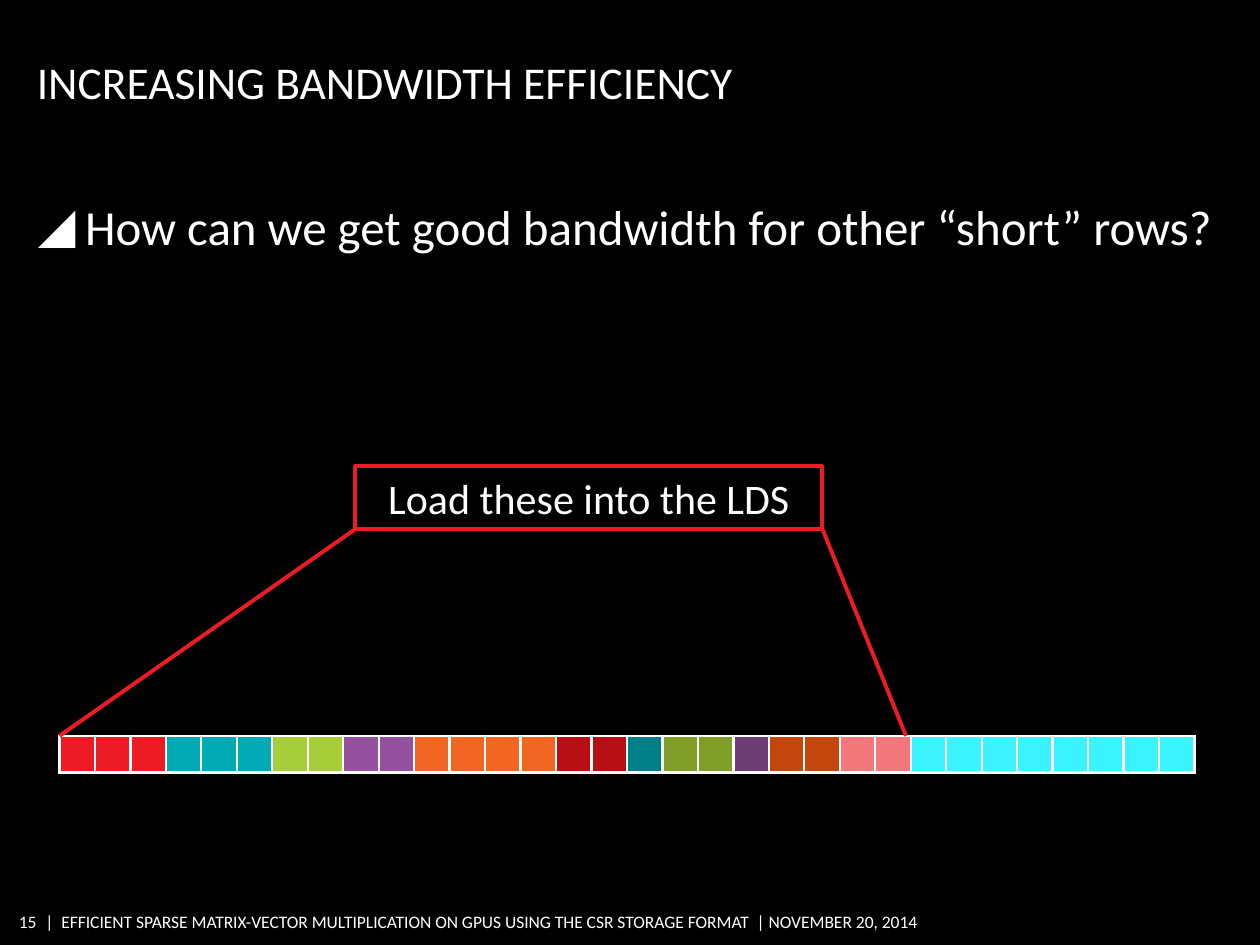
import pptx
import pptx.util
import pptx.dml.color
import pptx.enum.text
import pptx.enum.shapes
import pptx.oxml
import pptx.oxml.ns

Pt = pptx.util.Pt
Align = pptx.enum.text.PP_ALIGN
Anchor = pptx.enum.text.MSO_ANCHOR
Fit = pptx.enum.text.MSO_AUTO_SIZE
WHITE, RED = "FFFFFF", "ED1C24"

# Colour and number of cells in each matrix row
ROWS = [
    (RED, 3), ("00AAB5", 3), ("A6CE39", 2), ("9650A0", 2), ("F26522", 4),
    ("B80F15", 2), ("007F88", 1), ("7E9E27", 2), ("703C78", 1),
    ("C3470C", 2), ("F4777C", 2), ("3AF3FF", 8),
]


def color(text):
    return pptx.dml.color.RGBColor.from_string(text)


def add_xml(parent, tag, inner="", **attrs):
    words = " ".join(f'{key}="{val}"' for key, val in attrs.items())
    space = pptx.oxml.ns.nsdecls("a")
    parent.append(pptx.oxml.parse_xml(
        f"<a:{tag} {space} {words}>{inner}</a:{tag}>"))


def solid(text):
    return f'<a:solidFill><a:srgbClr val="{text}"/></a:solidFill>'


class Deck:
    """Holds the style and the current slide."""

    font = "Calibri"
    ink = WHITE
    edge = 2.25

    def __init__(self, wide, high):
        self.file = pptx.Presentation()
        self.file.slide_width = Pt(wide)
        self.file.slide_height = Pt(high)
        layout = self.file.slide_layouts.get_by_name("Title and Content")
        self.slide = self.file.slides.add_slide(layout)
        back = self.slide.background.fill
        back.solid()
        back.fore_color.rgb = color("000000")

    def set_text(self, shape, text, size, align=Align.LEFT,
                 anchor=Anchor.MIDDLE, pads=(0, 3.6, 0, 3.6), wrap=True,
                 bullet=None):
        frame = shape.text_frame
        frame.auto_size = Fit.NONE
        frame.word_wrap = wrap
        frame.vertical_anchor = anchor
        (frame.margin_left, frame.margin_top,
         frame.margin_right, frame.margin_bottom) = map(Pt, pads)
        frame.text = text
        para = frame.paragraphs[0]
        para.alignment = align
        para.space_before = Pt(0)
        if bullet:
            props = para._p.get_or_add_pPr()
            props.set("marL", str(Pt(27)))
            props.set("indent", str(Pt(-27)))
            add_xml(props, "buClr", f'<a:srgbClr val="{self.ink}"/>')
            add_xml(props, "buFont", typeface=self.font)
            add_xml(props, "buChar", char=bullet)
        para.font.name = self.font
        para.font.size = Pt(size)
        para.font.color.rgb = color(self.ink)

    def holder(self, index, box, text, size, **style):
        """Move and fill the template placeholder with this index."""
        shape = self.slide.placeholders[index]
        shape.left, shape.top, shape.width, shape.height = map(Pt, box)
        self.set_text(shape, text, size, **style)

    def label(self, box, text, size, **style):
        shape = self.slide.shapes.add_textbox(*map(Pt, box))
        self.set_text(shape, text, size, wrap=False, **style)

    def frame(self, box, text, size):
        kind = pptx.enum.shapes.MSO_SHAPE.RECTANGLE
        shape = self.slide.shapes.add_shape(kind, *map(Pt, box))
        shape.shadow.inherit = False
        shape.fill.background()
        shape.line.color.rgb = color(RED)
        shape.line.width = Pt(self.edge)
        self.set_text(shape, text, size, align=Align.CENTER)

    def line(self, start, end):
        kind = pptx.enum.shapes.MSO_CONNECTOR.STRAIGHT
        link = self.slide.shapes.add_connector(kind, *map(Pt, start + end))
        link.line.color.rgb = color(RED)
        link.line.width = Pt(self.edge)
        add_xml(link._element.spPr, "effectLst")

    def strip(self, box, fills):
        """Draw a one-row table with a cell for each fill."""
        table = self.slide.shapes.add_table(
            1, len(fills), *map(Pt, box)).table
        for col, cell, fill in zip(table.columns, table.rows[0].cells, fills):
            col.width = Pt(box[2] / len(fills))
            cell.margin_left = cell.margin_right = Pt(0)
            cell.margin_top = cell.margin_bottom = Pt(0)
            cell.text_frame.paragraphs[0].font.size = Pt(10)
            props = cell._tc.get_or_add_tcPr()
            for side in ("lnL", "lnR", "lnT", "lnB"):
                add_xml(props, side, solid(WHITE), w=Pt(1.5))
            cell.fill.solid()
            cell.fill.fore_color.rgb = color(fill)


def main():
    deck = Deck(720, 540)
    deck.holder(0, (21, 24.5, 590, 37.5), "INCREASING BANDWIDTH EFFICIENCY",
                26, anchor=Anchor.BOTTOM, pads=(0, 3.6, 0, 0))
    deck.holder(1, (21.6, 108.7, 677, 389),
                "How can we get good bandwidth for other “short” rows?",
                28, anchor=Anchor.TOP, bullet="◢")

    left, top, wide = 34, 420.5, 649.4
    fills = [fill for fill, count in ROWS for _ in range(count)]
    deck.strip((left, top, wide, 21), fills)

    x, y, w, h = 203, 266.4, 267, 36
    deck.frame((x, y, w, h), "Load these into the LDS", 24)
    deck.line((x, y + h), (left, top))
    deck.line((x + w, y + h), (517.7, top))

    deck.label((9.4, 517, 11.5, 18.7), "15", 10, align=Align.RIGHT)
    deck.label((26, 517, 510, 18.7),
               "|  EFFICIENT SPARSE MATRIX-VECTOR MULTIPLICATION ON GPUS "
               "USING THE CSR STORAGE FORMAT  | NOVEMBER 20, 2014", 10)
    deck.file.save("out.pptx")


if __name__ == "__main__":
    main()
